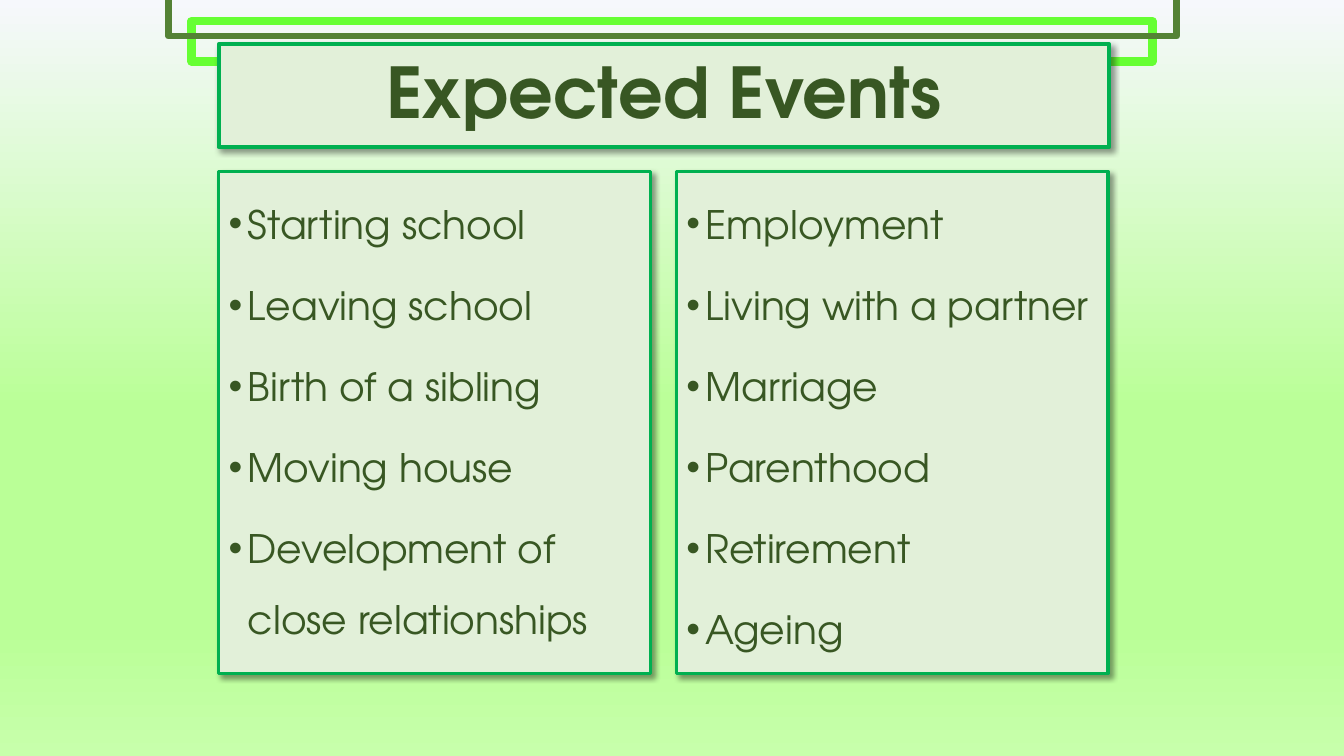
from lxml import etree
from pptx import Presentation
from pptx.dml.color import RGBColor
from pptx.enum.shapes import MSO_SHAPE
from pptx.enum.text import MSO_ANCHOR, PP_ALIGN
from pptx.oxml.ns import qn
from pptx.util import Inches, Pt

RECT = MSO_SHAPE.RECTANGLE
TOP, MID = MSO_ANCHOR.TOP, MSO_ANCHOR.MIDDLE
LEFT, CENTER = PP_ALIGN.LEFT, PP_ALIGN.CENTER
FONT = "TeX Gyre Adventor"
HUES = {"lime": "66FF33", "moss": "548235", "edge": "00B050",
        "pale": "E2F0D9", "ink": "385723", "shade": "000000"}
STOPS = [(0, "F6F8FC"), (54, "BAFF97"), (83, "BAFF97"), (100, "C7FFAB")]
LISTS = [
    ["Starting school", "Leaving school", "Birth of a sibling",
     "Moving house", "Development of close relationships"],
    ["Employment", "Living with a partner", "Marriage",
     "Parenthood", "Retirement", "Ageing"],
]

deck = Presentation()
deck.slide_width, deck.slide_height = Inches(13.33), Inches(7.5)
slide = deck.slides.add_slide(deck.slide_layouts[6])

back = slide.background.fill
back.gradient()
back.gradient_angle = 270
stops = slide.element.find(".//" + qn("a:gsLst"))
for old in list(stops):
    stops.remove(old)
for spot, hue in STOPS:
    stop = etree.SubElement(stops, qn("a:gs"), pos=str(spot * 1000))
    etree.SubElement(stop, qn("a:srgbClr"), val=hue)


def panel(x, y, w, h, edge, width, fill=None):
    box = slide.shapes.add_shape(RECT, Inches(x), Inches(y), Inches(w), Inches(h))
    box.line.color.rgb = RGBColor.from_string(HUES[edge])
    box.line.width = Pt(width)
    box.shadow.inherit = False
    if fill is None:
        box.fill.background()
        return box
    box.fill.solid()
    box.fill.fore_color.rgb = RGBColor.from_string(HUES[fill])
    glow = etree.SubElement(
        box.element.spPr.find(qn("a:effectLst")), qn("a:outerShdw"),
        blurRad=str(Pt(4)), dist=str(Pt(3)), dir=str(45 * 60000),
        algn="tl", rotWithShape="0")
    tint = etree.SubElement(glow, qn("a:srgbClr"), val=HUES["shade"])
    etree.SubElement(tint, qn("a:alpha"), val="40000")
    return box


def write(box, lines, size, bold=False, align=LEFT, anchor=TOP,
          space=1.0, before=0, bullet=None):
    frame = box.text_frame
    frame.word_wrap = True
    frame.vertical_anchor = anchor
    for i, line in enumerate(lines):
        para = frame.paragraphs[0] if i == 0 else frame.add_paragraph()
        para.alignment = align
        para.line_spacing = space
        para.space_before = Pt(before)
        run = para.add_run()
        run.text = line
        run.font.name = FONT
        run.font.size = Pt(size)
        run.font.bold = bold
        run.font.color.rgb = RGBColor.from_string(HUES["ink"])
        if bullet:
            props = para._p.get_or_add_pPr()
            props.set("marL", str(Inches(0.19)))
            props.set("indent", str(-Inches(0.19)))
            etree.SubElement(props, qn("a:buFont"), typeface="Arial")
            etree.SubElement(props, qn("a:buChar"), char=bullet)


X, COL, GAP = 2.17, 4.28, 0.26

panel(1.9, 0.21, 9.53, 0.4, "lime", 6)
title = panel(X, 0.44, 2 * COL + GAP, 1.02, "edge", 3, "pale")
title.width = Inches(8.83)
write(title, ["Expected Events"], 50, bold=True, align=CENTER, anchor=MID, space=0.9)
for i, items in enumerate(LISTS):
    card = panel(X + i * (COL + GAP), 1.7, COL, 4.98, "edge", 2.25, "pale")
    write(card, items, 28, space=1.5, before=7.5, bullet="•")
panel(1.67, -0.04, 10, 0.4, "moss", 4.5)

deck.save("out.pptx")
